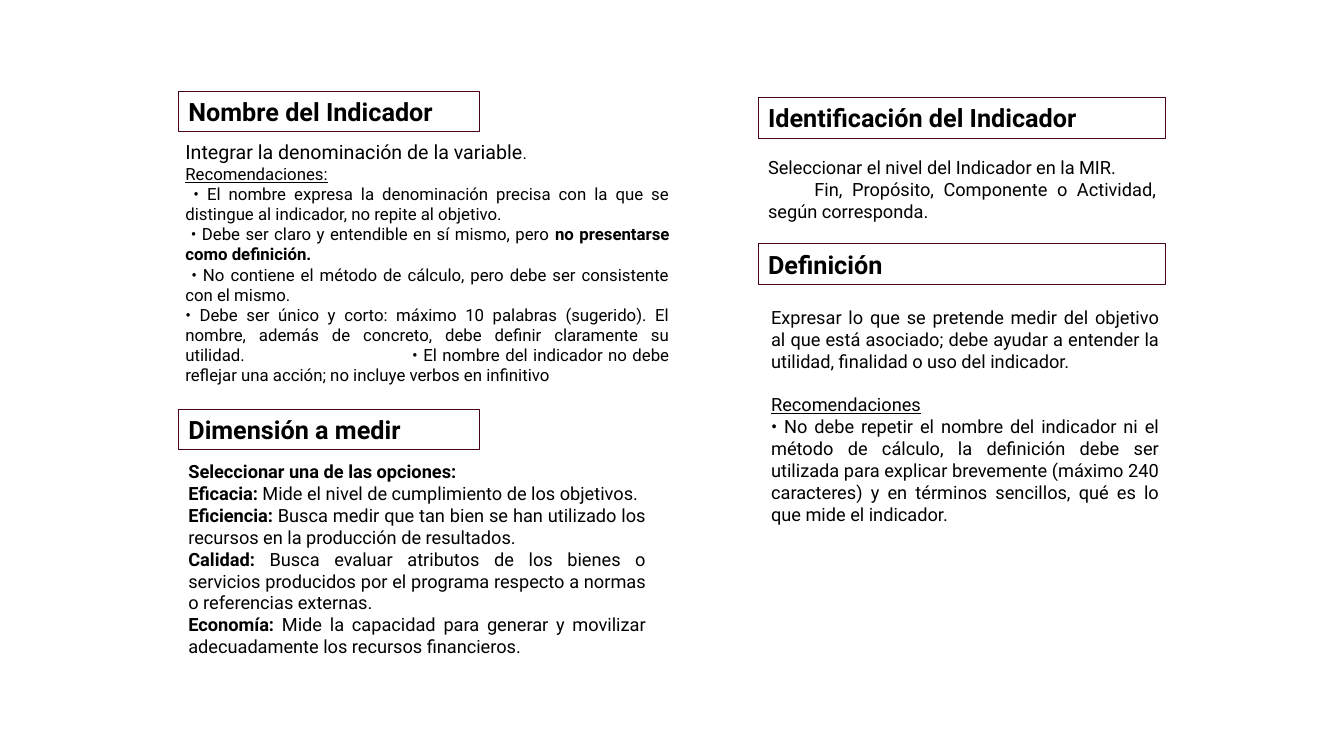
import pptx
import pptx.dml.color
import pptx.enum.shapes
import pptx.enum.text
import pptx.oxml
import pptx.oxml.ns
import pptx.util
from pptx.util import Inches

COLORS = {"text": "000000", "border": "4A001F"}
FONT = "Roboto"
LEFT, RIGHT = 1.77, 7.52


class IndicatorSlide:
    """Holds the style and the current slide, and adds headings and body texts."""

    def __init__(self, presentation):
        self.slide = presentation.slides.add_slide(presentation.slide_layouts[6])

    def color(self, name):
        return pptx.dml.color.RGBColor.from_string(COLORS[name])

    def style(self, paragraph, size, bold=False):
        font = paragraph.font
        font.name, font.size, font.bold = FONT, pptx.util.Pt(size), bold
        font.color.rgb = self.color("text")

    def frame(self, shape):
        frame = shape.text_frame
        frame.word_wrap = True
        frame.auto_size = pptx.enum.text.MSO_AUTO_SIZE.SHAPE_TO_FIT_TEXT
        return frame

    def heading(self, text, left, top, width):
        shape = self.slide.shapes.add_shape(
            pptx.enum.shapes.MSO_SHAPE.RECTANGLE,
            Inches(left), Inches(top), Inches(width), Inches(0.4))
        shape.shadow.inherit = False
        shape.fill.background()
        shape.line.color.rgb = self.color("border")
        shape.line.width = pptx.util.Pt(0.75)
        paragraph = self.frame(shape).paragraphs[0]
        paragraph.text = text
        paragraph.alignment = pptx.enum.text.PP_ALIGN.LEFT
        self.style(paragraph, 18, bold=True)

    def body(self, left, top, width, height, size, paragraphs):
        box = self.slide.shapes.add_textbox(
            Inches(left), Inches(top), Inches(width), Inches(height))
        frame = self.frame(box)
        for index, (runs, layout) in enumerate(paragraphs):
            paragraph = frame.add_paragraph() if index else frame.paragraphs[0]
            paragraph.alignment = pptx.enum.text.PP_ALIGN.JUSTIFY
            self.arrange(paragraph, **layout)
            self.style(paragraph, size)
            for text, changes in runs:
                run = paragraph.add_run()
                run.text = text
                for name, value in changes.items():
                    setattr(run.font, name, value)

    def arrange(self, paragraph, before=0, indent=0, tab=0):
        if before:
            paragraph.space_before = pptx.util.Pt(before)
        properties = paragraph._p.get_or_add_pPr()
        if indent:
            properties.set("indent", str(Inches(indent)))
        if tab:
            properties.append(pptx.oxml.parse_xml(
                f'<a:tabLst {pptx.oxml.ns.nsdecls("a")}>'
                f'<a:tab pos="{Inches(tab)}" algn="l"/></a:tabLst>'))


def plain(text, **layout):
    return [(text, {})], layout


def underlined(text, **layout):
    return [(text, {"underline": True})], layout


def option(name, meaning):
    return [(name, {"bold": True}), (meaning, {})], {}


def main():
    presentation = pptx.Presentation()
    presentation.slide_width = Inches(13.33)
    presentation.slide_height = Inches(7.5)
    page = IndicatorSlide(presentation)

    page.heading("Nombre del Indicador", LEFT, 0.91, 2.99)
    page.heading("Dimensión a medir", LEFT, 4.06, 2.99)
    page.heading("Identificación del Indicador", RIGHT, 0.97, 4.04)
    page.heading("Definición", RIGHT, 2.42, 4.04)

    page.body(1.74, 1.34, 5, 2.56, 12, [
        ([("Integrar la denominación de la variable", {"size": pptx.util.Pt(14)}),
          (".", {})], {}),
        underlined("Recomendaciones:"),
        plain(" • El nombre expresa la denominación precisa con la que se distingue "
              "al indicador, no repite al objetivo."),
        ([(" • Debe ser claro y entendible en sí mismo, pero", {}),
          (" no presentarse como definición.", {"bold": True})], {}),
        plain(" • No contiene el método de cálculo, pero debe ser consistente "
              "con el mismo."),
        plain("• Debe ser único y corto: máximo 10 palabras (sugerido). El nombre, "
              "además de concreto, debe definir claramente su utilidad.\t"
              "• El nombre del indicador no debe reflejar una acción; "
              "no incluye verbos en infinitivo", tab=2.25),
    ])
    page.body(LEFT, 4.52, 4.73, 2.07, 13, [
        option("Seleccionar una de las opciones:", ""),
        option("Eficacia: ", "Mide el nivel de cumplimiento de los objetivos."),
        option("Eficiencia: ", "Busca medir que tan bien se han utilizado los recursos "
               "en la producción de resultados."),
        option("Calidad: ", "Busca evaluar atributos de los bienes o servicios producidos "
               "por el programa respecto a normas o referencias externas."),
        option("Economía: ", "Mide la capacidad para generar y movilizar adecuadamente "
               "los recursos financieros."),
    ])
    page.body(RIGHT, 1.5, 4.04, 0.76, 13, [
        plain("Seleccionar el nivel del Indicador en la MIR."),
        plain("Fin, Propósito, Componente o Actividad, según corresponda.", indent=0.46),
    ])
    page.body(7.55, 2.99, 4.04, 2.29, 13, [
        plain("Expresar lo que se pretende medir del objetivo al que está asociado; "
              "debe ayudar a entender la utilidad, finalidad o uso del indicador."),
        underlined("Recomendaciones", before=15.5),
        plain("• No debe repetir el nombre del indicador ni el método de cálculo, "
              "la definición debe ser utilizada para explicar brevemente "
              "(máximo 240 caracteres) y en términos sencillos, "
              "qué es lo que mide el indicador."),
    ])
    presentation.save("out.pptx")


if __name__ == "__main__":
    main()
